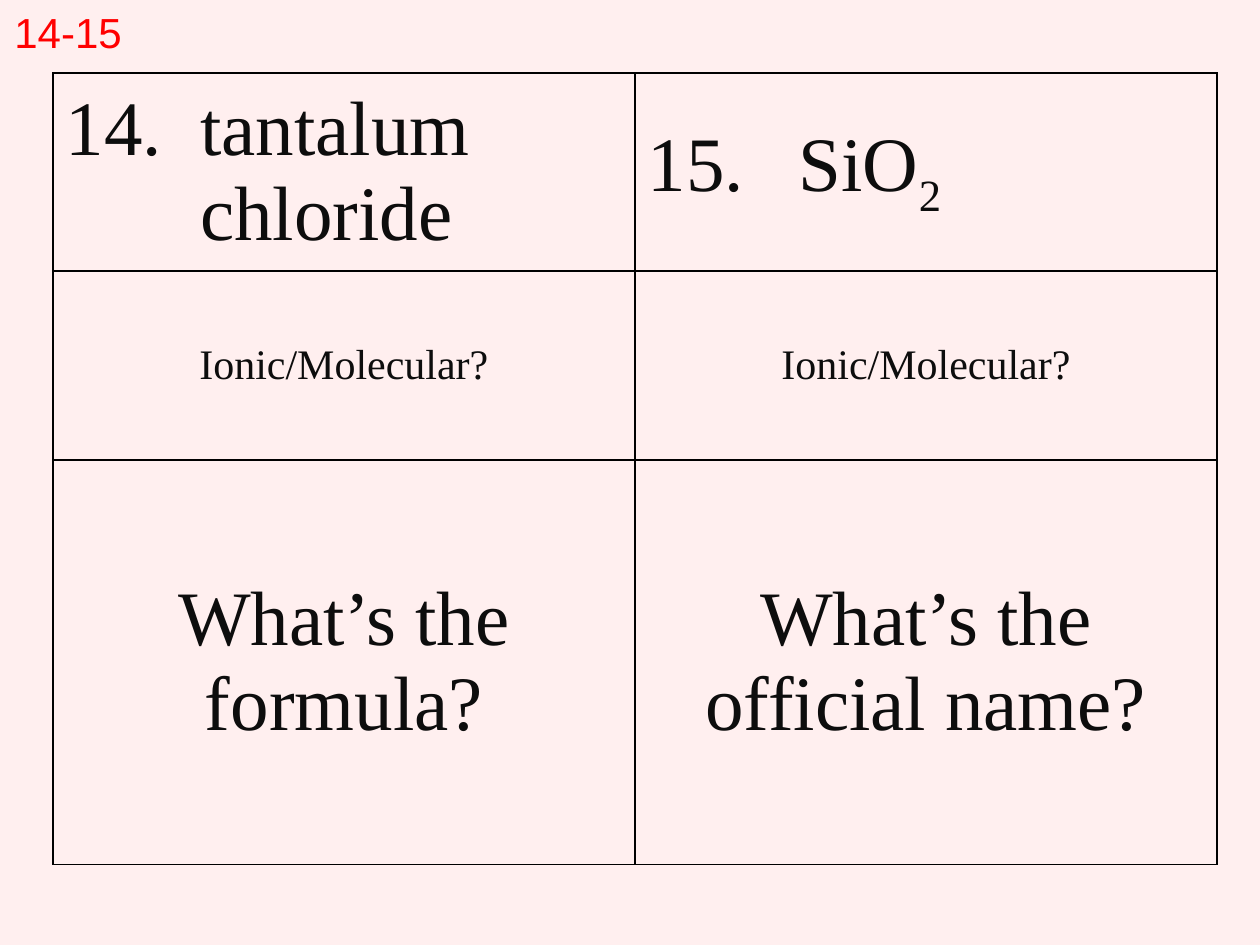
"""Build the quiz slide on naming compounds, questions 14 and 15."""
from dataclasses import dataclass

from lxml import etree
from pptx import Presentation
from pptx import util as u
from pptx.dml.color import RGBColor
from pptx.enum import text
from pptx.oxml.ns import qn

COLORS = {"background": "FFEFEF", "border": "000000", "ink": "0D0D0D", "label": "FF0000"}
SERIF, SANS = "Times New Roman", "Arial"
COLUMN_WIDTH = 4.62
ROW_HEIGHTS = (1.57, 1.5, 3.21)


@dataclass
class Entry:
    """Text of one table cell, with optional subscript and hanging indent."""
    words: str
    size: int = 44
    subscript: str = ""
    hanging: float = 0


ROWS = (
    (Entry("14.\ttantalum chloride", hanging=1.07),
     Entry("15.\tSiO", subscript="2", hanging=1.2)),
    (Entry("Ionic/Molecular?", 24),) * 2,
    (Entry("What’s the formula?"), Entry("What’s the official name?")),
)


def add_run(paragraph, words: str, size: int, font: str, color: str):
    """Append a formatted run and return it."""
    run = paragraph.add_run()
    run.text = words
    formats = {"size": u.Pt(size), "name": font, "bold": False}
    for name, value in formats.items():
        setattr(run.font, name, value)
    run.font.color.rgb = RGBColor.from_string(COLORS[color])
    return run


def add_borders(cell) -> None:
    """Draw a thin line on all four sides of a cell."""
    properties = cell._tc.get_or_add_tcPr()
    for position, side in enumerate(("lnL", "lnR", "lnT", "lnB")):
        line = etree.Element(qn(f"a:{side}"), w=str(u.Pt(1)))
        fill = etree.SubElement(line, qn("a:solidFill"))
        etree.SubElement(fill, qn("a:srgbClr"), val=COLORS["border"])
        properties.insert(position, line)


def fill_cell(cell, entry: Entry) -> None:
    """Write an entry into a bordered, transparent cell."""
    cell.fill.background()
    cell.vertical_anchor = text.MSO_ANCHOR.MIDDLE
    add_borders(cell)
    paragraph = cell.text_frame.paragraphs[0]
    if entry.hanging:
        paragraph.alignment = text.PP_ALIGN.LEFT
        indent = u.Inches(entry.hanging)
        properties = paragraph._p.get_or_add_pPr()
        for name, value in {"marL": indent, "indent": -indent}.items():
            properties.set(name, str(value))
    else:
        paragraph.alignment = text.PP_ALIGN.CENTER
    add_run(paragraph, entry.words, entry.size, SERIF, "ink")
    if entry.subscript:
        run = add_run(paragraph, entry.subscript, entry.size, SERIF, "ink")
        run._r.get_or_add_rPr().set("baseline", "-25000")


def add_question_table(slide) -> None:
    """Add the table with one question per column."""
    columns = len(ROWS[0])
    table = slide.shapes.add_table(
        len(ROWS), columns, u.Inches(0.42), u.Inches(0.58),
        u.Inches(COLUMN_WIDTH * columns), u.Inches(sum(ROW_HEIGHTS))).table
    table.first_row = table.horz_banding = False
    for column in table.columns:
        column.width = u.Inches(COLUMN_WIDTH)
    for row, height, entries in zip(table.rows, ROW_HEIGHTS, ROWS):
        row.height = u.Inches(height)
        for cell, entry in zip(row.cells, entries):
            fill_cell(cell, entry)


def add_label(slide) -> None:
    """Add the question range in the top left corner."""
    box = slide.shapes.add_textbox(0, 0, u.Inches(1.08), u.Inches(0.51))
    frame = box.text_frame
    frame.word_wrap = False
    frame.auto_size = text.MSO_AUTO_SIZE.SHAPE_TO_FIT_TEXT
    paragraph = frame.paragraphs[0]
    paragraph.alignment = text.PP_ALIGN.CENTER
    add_run(paragraph, "14-15", 24, SANS, "label")


def main() -> None:
    """Create and save the presentation."""
    presentation = Presentation()
    presentation.slide_width, presentation.slide_height = u.Inches(10), u.Inches(7.5)
    slide = presentation.slides.add_slide(presentation.slide_layouts[6])
    slide.background.fill.solid()
    slide.background.fill.fore_color.rgb = RGBColor.from_string(COLORS["background"])
    add_question_table(slide)
    add_label(slide)
    presentation.save("out.pptx")


if __name__ == "__main__":
    main()
